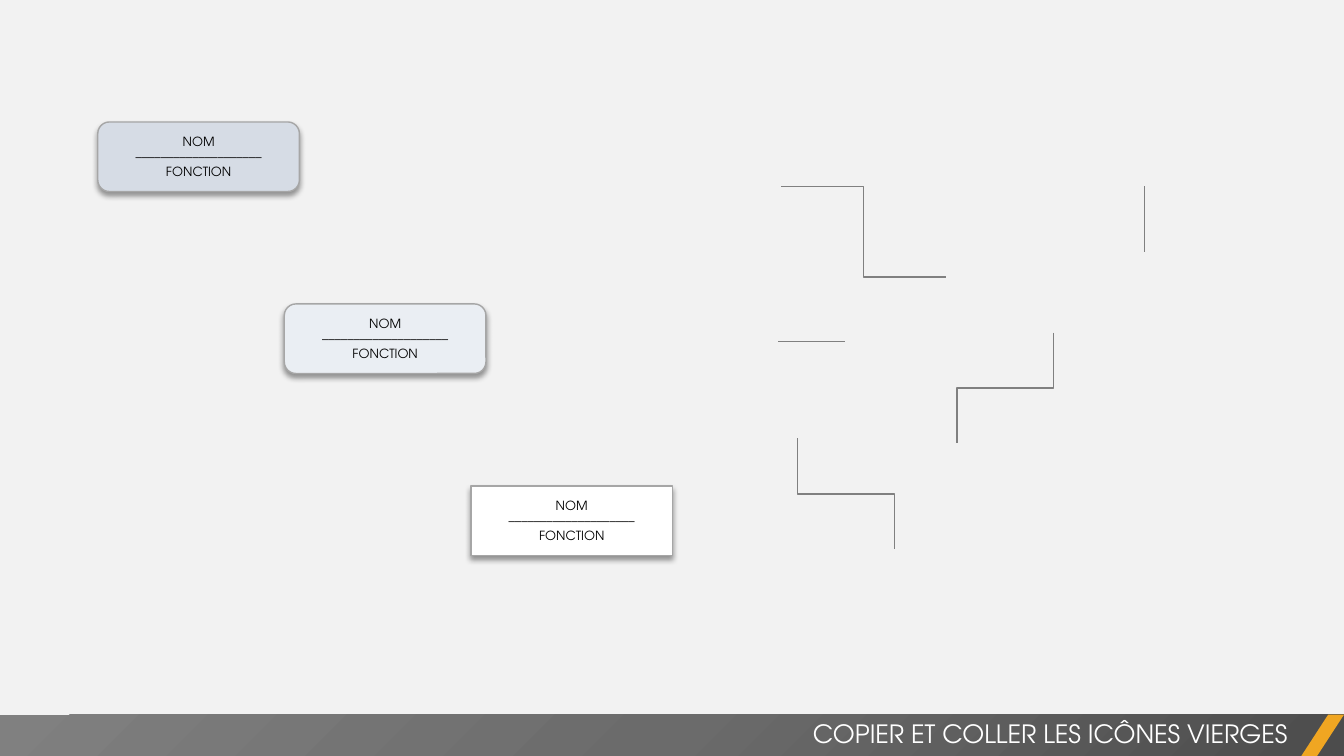
import pptx
import pptx.util
import pptx.dml.color
import pptx.enum.shapes
import pptx.enum.text
import pptx.oxml
import pptx.oxml.ns
import lxml.etree

Inches = pptx.util.Inches
Pt = pptx.util.Pt
Shape = pptx.enum.shapes.MSO_SHAPE
Link = pptx.enum.shapes.MSO_CONNECTOR
Align = pptx.enum.text.PP_ALIGN
qn = pptx.oxml.ns.qn
FONT = "TeX Gyre Adventor"
COLORS = {
    "back": "F2F2F2", "dark": "4C4C4C", "mid": "6B6B6B", "grey": "808080",
    "gold": "F0A622", "white": "FFFFFF", "black": "000000", "edge": "A6A6A6",
    "blue": "D6DCE5", "pale": "EAEEF3",
}
NS = pptx.oxml.ns.nsdecls("a")


def tint(name):
    return pptx.dml.color.RGBColor.from_string(COLORS[name])


def write(para, text, size, color, align):
    para.alignment = align
    run = para.add_run()
    run.text = text
    run.font.name = FONT
    run.font.size = Pt(size)
    run.font.color.rgb = tint(color)


deck = pptx.Presentation()
deck.slide_width = Inches(13.33)
deck.slide_height = Inches(7.5)
slide = deck.slides.add_slide(deck.slide_layouts[6])
slide.background.fill.solid()
slide.background.fill.fore_color.rgb = tint("back")
shapes = slide.shapes

bar = shapes.add_shape(Shape.RECTANGLE, 0, Inches(7.09), Inches(13.33), Inches(0.42))
bar.shadow.inherit = False
bar.line.fill.background()
bar.fill.gradient()
grad = bar._element.spPr.find(qn("a:gradFill"))
stops = "".join(
    f'<a:gs pos="{pos}"><a:srgbClr val="{COLORS[name]}"/></a:gs>'
    for pos, name in ((0, "dark"), (50000, "mid"), (100000, "grey"))
)
fade = pptx.oxml.parse_xml(
    f'<a:gradFill {NS} rotWithShape="1"><a:gsLst>{stops}</a:gsLst>'
    '<a:path path="circle"><a:fillToRect l="100000" t="100000"/></a:path></a:gradFill>'
)
grad.getparent().replace(grad, fade)

slash = shapes.add_shape(
    Shape.PARALLELOGRAM, Inches(12.9), Inches(7.09), Inches(0.43), Inches(0.42))
slash.adjustments[0] = 0.65
slash.shadow.inherit = False
slash.fill.solid()
slash.fill.fore_color.rgb = tint("gold")
slash.line.fill.background()

title = shapes.add_textbox(Inches(5.25), Inches(7.08), Inches(7.62), Inches(0.4))
title.text_frame.word_wrap = True
title.text_frame.auto_size = pptx.enum.text.MSO_AUTO_SIZE.SHAPE_TO_FIT_TEXT
write(title.text_frame.paragraphs[0], "COPIER ET COLLER LES ICÔNES VIERGES",
      18, "white", Align.RIGHT)

links = [
    (Link.ELBOW, 7.75, 1.85, 9.38, 2.75, 0),
    (Link.STRAIGHT, 7.72, 3.39, 8.38, 3.39, 0),
    (Link.STRAIGHT, 11.35, 1.85, 11.35, 2.5, 0),
    (Link.ELBOW, 9.42, 3.37, 10.52, 4.33, 90),
    (Link.ELBOW, 8.94, 4.42, 7.84, 5.38, 270),
]
for kind, x1, y1, x2, y2, turn in links:
    link = shapes.add_connector(kind, Inches(x1), Inches(y1), Inches(x2), Inches(y2))
    link.line.color.rgb = tint("grey")
    link.line.width = Pt(1)
    props = link._element.spPr
    lxml.etree.SubElement(props, qn("a:effectLst"))
    if turn:
        props.find(qn("a:xfrm")).set("rot", str(turn * 60000))

cards = [
    (1, Shape.FLOWCHART_ALTERNATE_PROCESS, "pale"),
    (2, Shape.RECTANGLE, "white"),
    (0, Shape.FLOWCHART_ALTERNATE_PROCESS, "blue"),
]
for step, form, color in cards:
    card = shapes.add_shape(form, Inches(0.97 + 1.85 * step), Inches(1.21 + 1.805 * step),
                            Inches(2), Inches(0.69))
    card.fill.solid()
    card.fill.fore_color.rgb = tint(color)
    card.line.color.rgb = tint("edge")
    card.line.width = Pt(1)
    card.shadow.inherit = False
    card._element.spPr.find(qn("a:effectLst")).append(pptx.oxml.parse_xml(
        f'<a:outerShdw {NS} blurRad="{Pt(4)}" dist="{Pt(3)}" dir="5400000" rotWithShape="0">'
        f'<a:srgbClr val="{COLORS["black"]}"><a:alpha val="40000"/></a:srgbClr></a:outerShdw>'
    ))
    frame = card.text_frame
    frame.word_wrap = True
    frame.vertical_anchor = pptx.enum.text.MSO_ANCHOR.MIDDLE
    frame.margin_left = frame.margin_right = Inches(0.02)
    frame.margin_top = frame.margin_bottom = Inches(0.02)
    for row, text in enumerate(("NOM", "–" * 20, "FONCTION")):
        para = frame.add_paragraph() if row else frame.paragraphs[0]
        write(para, text, 9, "black", Align.CENTER)

deck.save("out.pptx")
